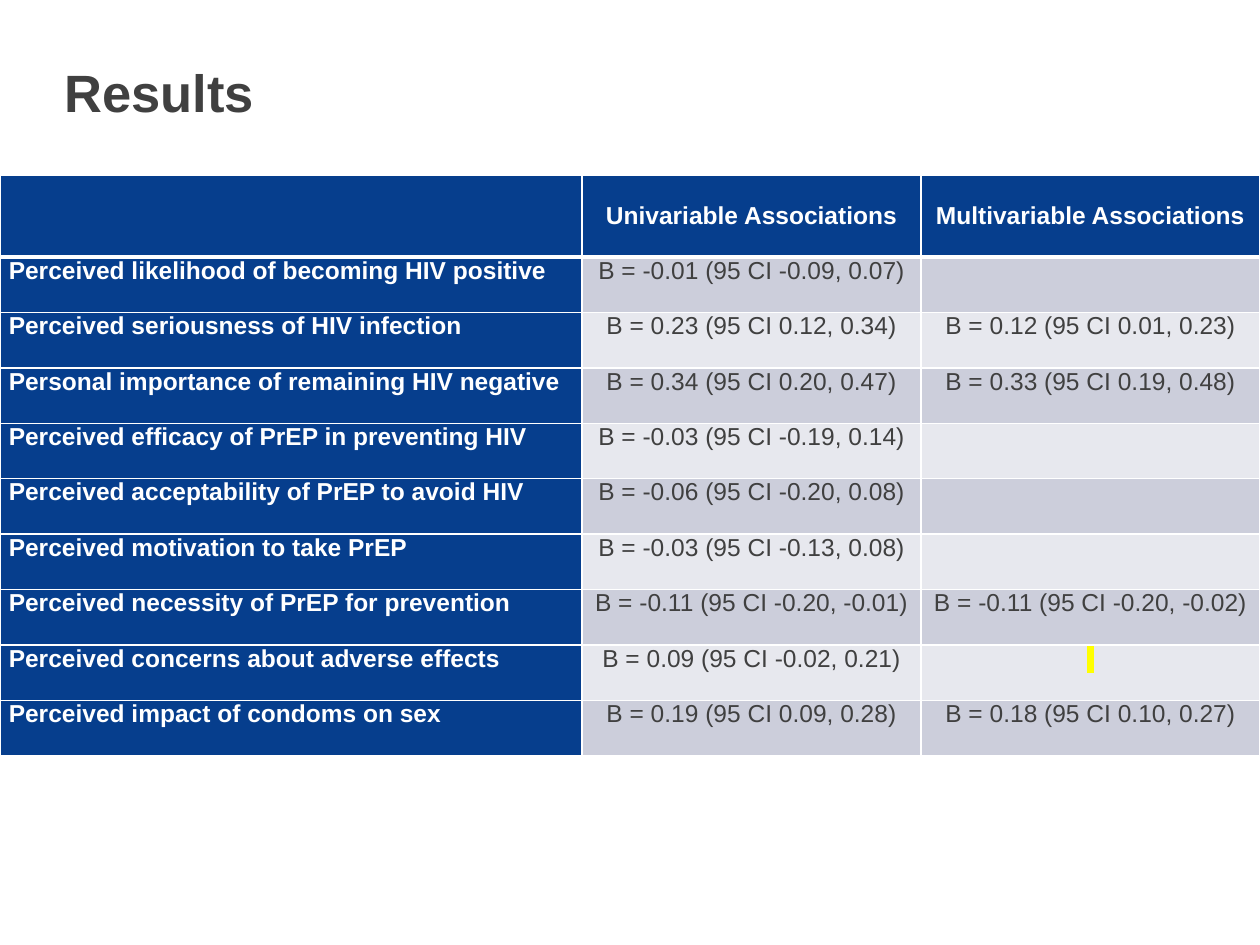
from lxml import etree
from pptx import Presentation
from pptx import util as u
from pptx.dml.color import RGBColor
from pptx.enum import text
from pptx.oxml import ns

COLORS = {"blue": "063E8D", "dark": "CCCEDB", "light": "E7E8EE",
          "text": "404040", "white": "FFFFFF", "mark": "FFFF00"}
HEADER = ["", "Univariable Associations", "Multivariable Associations"]
ROWS = [
    ["Perceived likelihood of becoming HIV positive", "B = -0.01 (95 CI -0.09, 0.07)", ""],
    ["Perceived seriousness of HIV infection", "B = 0.23 (95 CI 0.12, 0.34)", "B = 0.12 (95 CI 0.01, 0.23)"],
    ["Personal importance of remaining HIV negative", "B = 0.34 (95 CI 0.20, 0.47)", "B = 0.33 (95 CI 0.19, 0.48)"],
    ["Perceived efficacy of PrEP in preventing HIV", "B = -0.03 (95 CI -0.19, 0.14)", ""],
    ["Perceived acceptability of PrEP to avoid HIV", "B = -0.06 (95 CI -0.20, 0.08)", ""],
    ["Perceived motivation to take PrEP", "B = -0.03 (95 CI -0.13, 0.08)", ""],
    ["Perceived necessity of PrEP for prevention", "B = -0.11 (95 CI -0.20, -0.01)", "B = -0.11 (95 CI -0.20, -0.02)"],
    ["Perceived concerns about adverse effects", "B = 0.09 (95 CI -0.02, 0.21)", " "],
    ["Perceived impact of condoms on sex", "B = 0.19 (95 CI 0.09, 0.28)", "B = 0.18 (95 CI 0.10, 0.27)"],
]
COL_WIDTHS = [4.62, 2.69, 2.69]
HEADER_HEIGHT, ROW_HEIGHT = 0.65, 0.44


def rgb(name):
    return RGBColor.from_string(COLORS[name])


def write(tf, words, size=14, color="text", bold=False, align="LEFT", mark=None):
    p = tf.paragraphs[0]
    p.alignment = getattr(text.PP_ALIGN, align)
    if not words:
        p.font.size = u.Pt(size)
        return
    r = p.add_run()
    r.text = words
    r.font.size, r.font.bold = u.Pt(size), bold
    r.font.color.rgb = rgb(color)
    if mark:
        highlight = etree.SubElement(r.font._element, ns.qn("a:highlight"))
        etree.SubElement(highlight, ns.qn("a:srgbClr"), val=COLORS[mark])
    r.font.name = "Arial"


def add_borders(cell, top=1, bottom=1):
    tc_pr = cell._tc.get_or_add_tcPr()
    for side, width in {"L": 1, "R": 1, "T": top, "B": bottom}.items():
        ln = etree.SubElement(tc_pr, ns.qn(f"a:ln{side}"), w=str(u.Pt(width)))
        fill = etree.SubElement(ln, ns.qn("a:solidFill"))
        etree.SubElement(fill, ns.qn("a:srgbClr"), val=COLORS["white"])


def format_cell(cell, words, row, col):
    head = row == 0 or col == 0
    add_borders(cell, top=3 if row == 1 else 1, bottom=3 if row == 0 else 1)
    cell.fill.solid()
    cell.fill.fore_color.rgb = rgb("blue" if head else "dark" if row % 2 else "light")
    cell.margin_left = cell.margin_right = u.Inches(0.07)
    cell.margin_top = cell.margin_bottom = 0
    cell.vertical_anchor = text.MSO_ANCHOR.TOP if row else text.MSO_ANCHOR.MIDDLE
    write(cell.text_frame, words, color="white" if head else "text", bold=head,
          align="CENTER" if col else "LEFT", mark="mark" if words == " " else None)


def add_results(s, left, top):
    data = [HEADER] + ROWS
    heights = [HEADER_HEIGHT] + [ROW_HEIGHT] * len(ROWS)
    frame = s.shapes.add_table(len(data), len(HEADER), left, top,
                               u.Inches(sum(COL_WIDTHS)), u.Inches(sum(heights)))
    table = frame.table
    for column, width in zip(table.columns, COL_WIDTHS):
        column.width = u.Inches(width)
    for i, (values, height) in enumerate(zip(data, heights)):
        table.rows[i].height = u.Inches(height)
        for j, words in enumerate(values):
            format_cell(table.cell(i, j), words, i, j)


def add_title(s, words):
    sp = s.shapes.title
    sp.left, sp.top, sp.width, sp.height = map(u.Inches, (0.51, 0.47, 8.03, 0.51))
    tf = sp.text_frame
    tf.margin_left = tf.margin_right = tf.margin_top = tf.margin_bottom = 0
    tf.vertical_anchor = text.MSO_ANCHOR.BOTTOM
    tf.auto_size = text.MSO_AUTO_SIZE.NONE
    write(tf, words, size=30, bold=True)


def main():
    """Build the slide of univariable and multivariable results."""
    prs = Presentation()
    prs.slide_width, prs.slide_height = u.Inches(10), u.Inches(7.5)
    s = prs.slides.add_slide(prs.slide_layouts[5])
    add_title(s, "Results")
    add_results(s, 0, u.Inches(1.39))
    prs.save("out.pptx")


if __name__ == "__main__":
    main()
